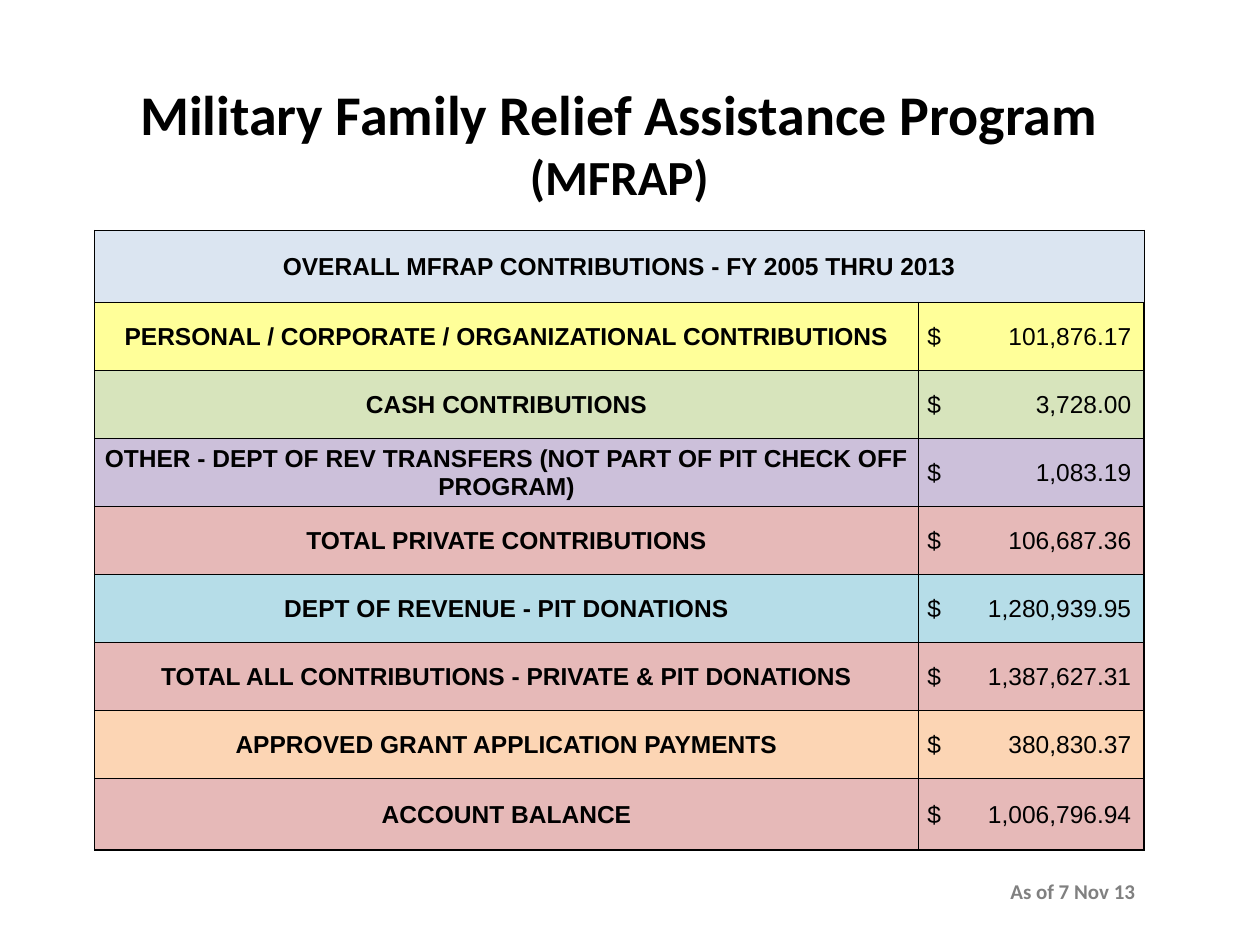
from lxml import etree
from pptx import Presentation
from pptx.dml.color import RGBColor
from pptx.enum.text import MSO_ANCHOR, PP_ALIGN
from pptx.oxml.ns import qn
from pptx.util import Inches, Pt

CENTER, LEFT = PP_ALIGN.CENTER, PP_ALIGN.LEFT
MIDDLE = MSO_ANCHOR.MIDDLE
COLORS = {
    "black": "000000", "gray": "808080", "header": "DBE5F1", "yellow": "FFFF99",
    "green": "D7E4BC", "purple": "CCC0DA", "red": "E6B9B8", "blue": "B6DDE8",
    "orange": "FCD5B4",
}
CONTRIBUTIONS = [
    ("PERSONAL / CORPORATE / ORGANIZATIONAL CONTRIBUTIONS", "101,876.17", "yellow"),
    ("CASH CONTRIBUTIONS", "3,728.00", "green"),
    ("OTHER - DEPT OF REV TRANSFERS (NOT PART OF PIT CHECK OFF PROGRAM)", "1,083.19", "purple"),
    ("TOTAL PRIVATE CONTRIBUTIONS", "106,687.36", "red"),
    ("DEPT OF REVENUE - PIT DONATIONS", "1,280,939.95", "blue"),
    ("TOTAL ALL CONTRIBUTIONS - PRIVATE & PIT DONATIONS", "1,387,627.31", "red"),
    ("APPROVED GRANT APPLICATION PAYMENTS", "380,830.37", "orange"),
    ("ACCOUNT BALANCE", "1,006,796.94", "red"),
]


def add_text(paragraph, text, color="black", **formats):
    run = paragraph.add_run()
    run.text = text
    run.font.color.rgb = RGBColor.from_string(COLORS[color])
    for name, value in formats.items():
        setattr(run.font, name, value)


def add_border(cell, side, points):
    properties = cell._tc.get_or_add_tcPr()
    line = etree.SubElement(properties, qn(f"a:ln{side}"), w=str(Pt(points)))
    fill = etree.SubElement(line, qn("a:solidFill"))
    etree.SubElement(fill, qn("a:srgbClr"), val=COLORS["black"])


presentation = Presentation()
presentation.slide_width, presentation.slide_height = Inches(10), Inches(7.5)
slide = presentation.slides.add_slide(presentation.slide_layouts[6])

left, width = Inches(0.75), Inches(8.33)
column_widths = [Inches(6.54), Inches(1.79)]
row_heights = [Inches(0.57)] + [Inches(0.54)] * 7 + [Inches(0.57)]
last_row = len(CONTRIBUTIONS)
table = slide.shapes.add_table(
    last_row + 1, 2, left, Inches(1.83), width, sum(row_heights)).table
table.first_row = table.horz_banding = False
for column, column_width in zip(table.columns, column_widths):
    column.width = column_width
for row, row_height in zip(table.rows, row_heights):
    row.height = row_height
table.cell(0, 0).merge(table.cell(0, 1))

rows = [("OVERALL MFRAP CONTRIBUTIONS - FY 2005 THRU 2013", "", "header")] + CONTRIBUTIONS
for row_index, (label, amount, color) in enumerate(rows):
    for column_index, text in enumerate((label, f"$\t{amount}" if amount else "")):
        cell = table.cell(row_index, column_index)
        is_amount = column_index == 1
        cell_format = {
            "vertical_anchor": MIDDLE, "margin_left": Inches(0.07 if is_amount else 0.01),
            "margin_right": Inches(0.01), "margin_top": Inches(0.01), "margin_bottom": 0,
        }
        for name, value in cell_format.items():
            setattr(cell, name, value)
        outer_sides = {
            "L": column_index == 0, "R": is_amount,
            "T": row_index <= 1, "B": row_index in (0, last_row),
        }
        for side, is_outer in outer_sides.items():
            add_border(cell, side, 1 if is_outer else 0.5)
        cell.fill.solid()
        cell.fill.fore_color.rgb = RGBColor.from_string(COLORS[color])
        paragraph = cell.text_frame.paragraphs[0]
        paragraph.alignment = LEFT if is_amount else CENTER
        if text:
            add_text(paragraph, text, name="Arial", size=Pt(14), bold=not is_amount)
        if is_amount and text:
            tabs = etree.SubElement(paragraph._p.get_or_add_pPr(), qn("a:tabLst"))
            etree.SubElement(tabs, qn("a:tab"), pos=str(Inches(1.62)), algn="r")

title = slide.shapes.add_textbox(left, Inches(0.58), width, Inches(1.11))
title.text_frame.word_wrap = True
heading = title.text_frame.paragraphs[0]
heading.alignment = CENTER
for text, size in (("Military Family Relief Assistance Program ", 32), ("(MFRAP)", 28)):
    add_text(heading, text, name="Calibri", size=Pt(size), bold=True)

date_note = slide.shapes.add_textbox(Inches(7.92), Inches(6.92), Inches(1.21), Inches(0.3))
date_note.text_frame.word_wrap = False
add_text(date_note.text_frame.paragraphs[0], "As of 7 Nov 13", "gray",
         name="Calibri", size=Pt(12), bold=True)

presentation.save("out.pptx")
